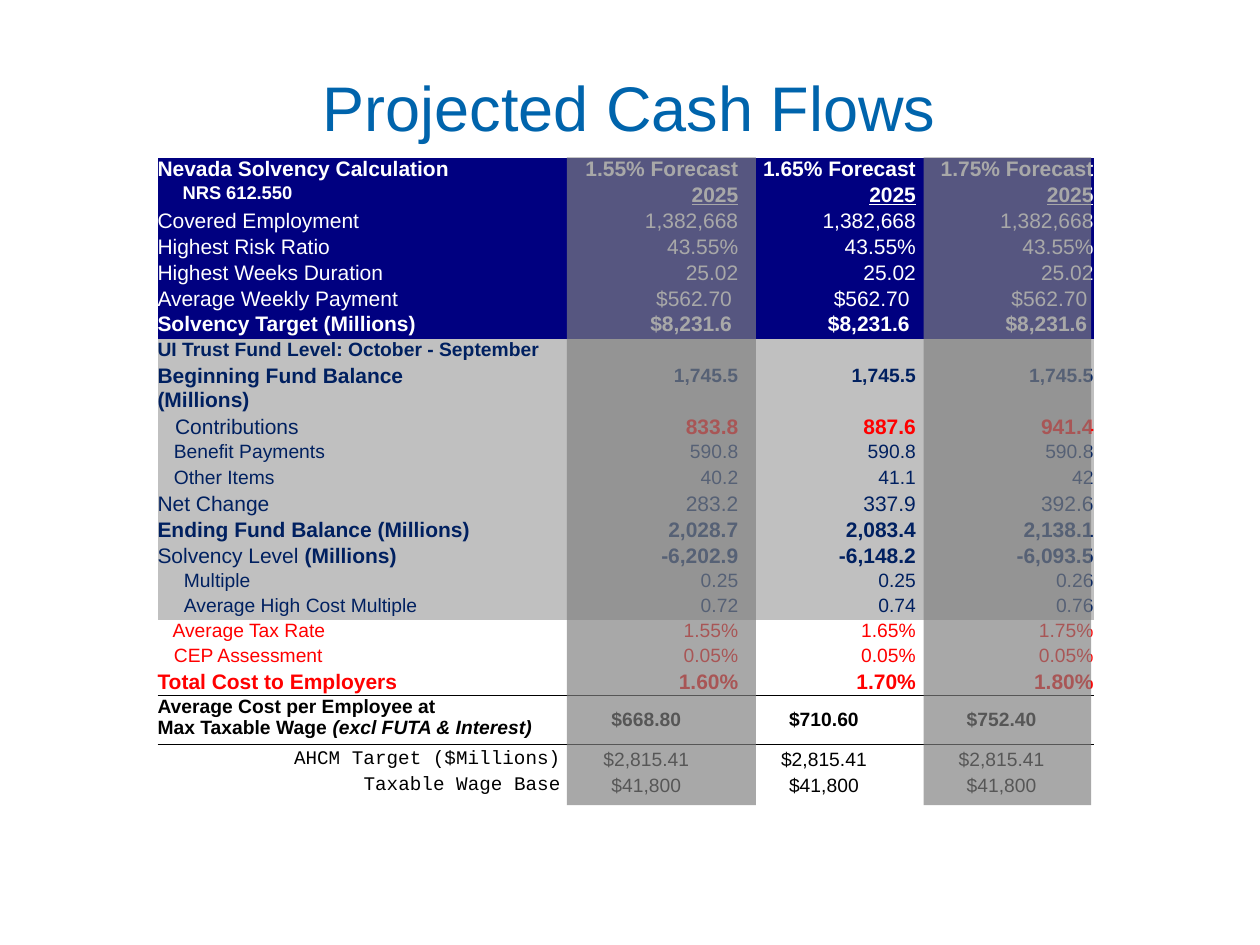
from dataclasses import dataclass, field

from lxml.etree import SubElement
from pptx import Presentation
from pptx.dml.color import RGBColor
from pptx.enum.shapes import MSO_SHAPE as Preset
from pptx.enum.text import MSO_ANCHOR as Anchor, PP_ALIGN as Align
from pptx.oxml import parse_xml
from pptx.oxml.ns import nsdecls, qn
from pptx.util import Inches, Pt


@dataclass(frozen=True)
class Theme:
    sans: str = "Arial"
    mono: str = "Courier New"
    title: str = "0064AC"
    navy: str = "000080"
    silver: str = "C0C0C0"
    ink: str = "002060"
    red: str = "FF0000"
    white: str = "FFFFFF"
    black: str = "000000"
    veil: str = "808080"
    veil_opacity: int = 68
    title_size: float = 36
    large: float = 12
    normal: float = 11
    small: float = 10.5


THEME = Theme()
NO_GRID = "{2D5ABB26-0587-4C30-8999-92F81FD0307C}"
LEFT, TOP = 1.25, 1.25
COLUMN_WIDTHS = (2.56, 0.64, 1.41, 1.41, 1.41)
TABLE_HEIGHT = 5.14
LINE, SHORT_LINE, DOUBLE_LINE = 14.8, 14.3, 28


@dataclass
class Row:
    label: str
    values: tuple = ()
    size: float = THEME.large
    bold: bool = False
    indent: float = 0
    merged: bool = False
    height: float = LINE
    tail: str = ""
    tail_format: dict = field(default_factory=dict)
    label_format: dict = field(default_factory=dict)
    value_format: dict = field(default_factory=dict)


def same(value):
    return (value,) * 3


SMALL = dict(size=THEME.normal)
SMALL_SHORT = dict(size=THEME.normal, height=SHORT_LINE)
CENTERED = dict(align=Align.CENTER, right=0.05)
BOTTOM = dict(CENTERED, anchor=Anchor.BOTTOM)
MONO = dict(font=THEME.mono, align=Align.RIGHT, anchor=Anchor.BOTTOM)

HEADER_ROWS = [
    Row("Nevada Solvency Calculation",
        ("1.55% Forecast", "1.65% Forecast", "1.75% Forecast"), bold=True, merged=True),
    Row("NRS 612.550", same("2025"), bold=True, indent=0.2,
        label_format=dict(size=THEME.small), value_format=dict(underline=True)),
    Row("Covered Employment", same("1,382,668")),
    Row("Highest Risk Ratio", same("43.55%")),
    Row("Highest Weeks Duration", same("25.02")),
    Row("Average Weekly Payment", same("$562.70"), value_format=dict(right=0.05)),
    Row("Solvency Target (Millions)", same("$8,231.6"), bold=True, merged=True,
        value_format=dict(right=0.05)),
]
FUND_ROWS = [
    Row("UI Trust Fund Level: October - September", bold=True, merged=True, **SMALL),
    Row("Beginning Fund Balance (Millions)", same("1,745.5"), bold=True,
        height=DOUBLE_LINE, value_format=SMALL),
    Row("Contributions", ("833.8", "887.6", "941.4"), indent=0.14,
        value_format=dict(color=THEME.red, bold=True)),
    Row("Benefit Payments", same("590.8"), indent=0.13, **SMALL),
    Row("Other Items", ("40.2", "41.1", "42"), indent=0.13, **SMALL),
    Row("Net Change", ("283.2", "337.9", "392.6")),
    Row("Ending Fund Balance (Millions)", ("2,028.7", "2,083.4", "2,138.1"),
        bold=True, merged=True),
    Row("Solvency Level ", ("-6,202.9", "-6,148.2", "-6,093.5"), tail="(Millions)",
        tail_format=dict(bold=True), value_format=dict(bold=True)),
    Row("Multiple", ("0.25", "0.25", "0.26"), indent=0.21, **SMALL_SHORT),
    Row("Average High Cost Multiple", ("0.72", "0.74", "0.76"), indent=0.21,
        merged=True, **SMALL_SHORT),
]
COST_ROWS = [
    Row("Average Tax Rate", ("1.55%", "1.65%", "1.75%"), indent=0.12, **SMALL_SHORT),
    Row("CEP Assessment", same("0.05%"), indent=0.13, merged=True, **SMALL_SHORT),
    Row("Total Cost to Employers", ("1.60%", "1.70%", "1.80%"), bold=True,
        height=SHORT_LINE),
]
WAGE_ROWS = [
    Row("Average Cost per Employee at\nMax Taxable Wage ", ("$668.80", "$710.60", "$752.40"),
        bold=True, merged=True, height=DOUBLE_LINE, tail="(excl FUTA & Interest)",
        tail_format=dict(italic=True), value_format=dict(CENTERED, anchor=Anchor.MIDDLE), **SMALL),
    Row("AHCM Target ($Millions)", same("$2,815.41"), merged=True,
        label_format=MONO, value_format=BOTTOM, **SMALL),
    Row("Taxable Wage Base", same("$41,800"), merged=True,
        label_format=MONO, value_format=BOTTOM, **SMALL),
]
BANDS = [
    (HEADER_ROWS, THEME.navy, THEME.white),
    (FUND_ROWS, THEME.silver, THEME.ink),
    (COST_ROWS, THEME.white, THEME.red),
    (WAGE_ROWS, THEME.white, THEME.black),
]


def add_text(paragraph, text, size, color, font=THEME.sans, bold=False,
             italic=False, underline=False):
    for index, line in enumerate(text.split("\n")):
        if index:
            paragraph.add_line_break()
        run = paragraph.add_run()
        run.text = line
        run.font.name, run.font.size = font, Pt(size)
        run.font.bold, run.font.italic, run.font.underline = bold, italic, underline
        run.font.color.rgb = RGBColor.from_string(color)


def fill_cell(cell, text, align=Align.LEFT, anchor=Anchor.TOP, indent=0, right=0, **style):
    cell.margin_left, cell.margin_right = Inches(indent), Inches(right)
    cell.vertical_anchor = anchor
    paragraph = cell.text_frame.paragraphs[0]
    paragraph.alignment = align
    add_text(paragraph, text, **style)
    return paragraph


def clear_cell(cell, fill):
    cell.margin_left = cell.margin_right = cell.margin_top = cell.margin_bottom = 0
    cell.fill.solid()
    cell.fill.fore_color.rgb = RGBColor.from_string(fill)
    SubElement(cell.text_frame.paragraphs[0]._p, qn("a:endParaRPr"), sz="1000")


def add_rule(cell, side):
    line = parse_xml(
        f'<a:{side} {nsdecls("a")} w="{Pt(0.5)}"><a:solidFill>'
        f'<a:srgbClr val="{THEME.black}"/></a:solidFill></a:{side}>')
    cell._tc.get_or_add_tcPr().insert(0, line)


def add_row(table, index, row, fill, color):
    cells = [table.cell(index, column) for column in range(len(COLUMN_WIDTHS))]
    table.rows[index].height = Pt(row.height)
    for cell in cells:
        clear_cell(cell, fill)
    if row.merged:
        cells[0].merge(cells[1])
    base = dict(size=row.size, bold=row.bold, color=color)
    paragraph = fill_cell(cells[0], row.label, indent=row.indent, **{**base, **row.label_format})
    if row.tail:
        add_text(paragraph, row.tail, **{**base, **row.tail_format})
    for cell, value in zip(cells[2:], row.values):
        fill_cell(cell, value, **{**base, "align": Align.RIGHT, **row.value_format})
    return cells


def add_cash_flow_table(slide):
    count = sum(len(rows) for rows, _, _ in BANDS)
    frame = slide.shapes.add_table(
        count, len(COLUMN_WIDTHS), Inches(LEFT), Inches(TOP),
        Inches(sum(COLUMN_WIDTHS)), Pt(LINE * count))
    table = frame.table
    table.first_row = table.horz_banding = False
    for style in frame._element.iter(qn("a:tableStyleId")):
        style.text = NO_GRID
    for column, width in zip(table.columns, COLUMN_WIDTHS):
        column.width = Inches(width)
    grid = []
    for rows, fill, color in BANDS:
        for row in rows:
            grid.append(add_row(table, len(grid), row, fill, color))
    first_wage = count - len(WAGE_ROWS)
    for above, below in zip(grid[first_wage - 1], grid[first_wage]):
        add_rule(above, "lnB")
        add_rule(below, "lnT")


def add_title(slide, text):
    box = slide.shapes.add_textbox(Inches(0.33), Inches(0.08), Inches(9.33), Inches(1.08))
    frame = box.text_frame
    frame.word_wrap, frame.vertical_anchor = True, Anchor.BOTTOM
    frame.margin_bottom = Inches(0.02)
    paragraph = frame.paragraphs[0]
    paragraph.alignment = Align.CENTER
    add_text(paragraph, text, THEME.title_size, THEME.title)


def add_veil(slide, left, width):
    veil = slide.shapes.add_shape(
        Preset.RECTANGLE, Inches(left), Inches(TOP), Inches(width), Inches(TABLE_HEIGHT))
    veil.shadow.inherit = False
    veil.line.fill.background()
    veil.fill.solid()
    veil.fill.fore_color.rgb = RGBColor.from_string(THEME.veil)
    color = next(veil._element.spPr.iter(qn("a:srgbClr")))
    SubElement(color, qn("a:alpha"), val=str(THEME.veil_opacity * 1000))


def main():
    presentation = Presentation()
    presentation.slide_width, presentation.slide_height = Inches(10), Inches(7.5)
    slide = presentation.slides.add_slide(presentation.slide_layouts[6])
    add_title(slide, "Projected Cash Flows")
    add_cash_flow_table(slide)
    add_veil(slide, 4.5, 1.5)
    add_veil(slide, 7.33, 1.33)
    presentation.save("out.pptx")


if __name__ == "__main__":
    main()
